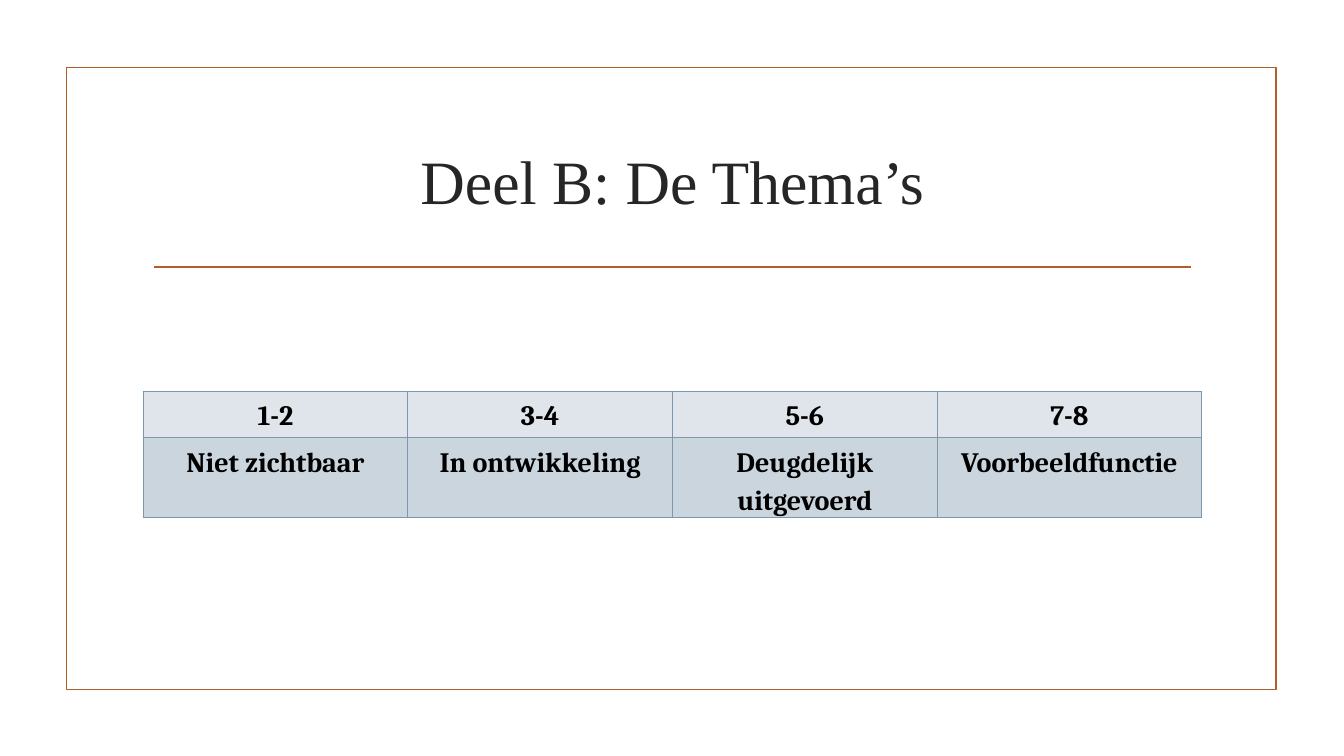
from lxml import etree
from pptx import Presentation
from pptx.dml.color import RGBColor
from pptx.enum.shapes import MSO_CONNECTOR, MSO_SHAPE
from pptx.enum.text import MSO_ANCHOR, PP_ALIGN
from pptx.oxml.ns import qn
from pptx.util import Inches, Pt

# Content
TITLE = "Deel B: De Thema’s"
SCALE = [
    ["1-2", "3-4", "5-6", "7-8"],
    ["Niet zichtbaar", "In ontwikkeling", "Deugdelijk uitgevoerd", "Voorbeeldfunctie"],
]

# Colours and constants
RUST = RGBColor(0xB1, 0x5E, 0x28)
DARK = RGBColor(0x26, 0x26, 0x26)
BLACK = RGBColor(0x00, 0x00, 0x00)
BORDER = RGBColor(0x7E, 0x97, 0xAD)
ROW_FILLS = [RGBColor(0xDF, 0xE5, 0xEA), RGBColor(0xCB, 0xD5, 0xDE)]
RECT, STRAIGHT = MSO_SHAPE.RECTANGLE, MSO_CONNECTOR.STRAIGHT
CENTER, TOP, MIDDLE = PP_ALIGN.CENTER, MSO_ANCHOR.TOP, MSO_ANCHOR.MIDDLE

# Layout, in inches
LEFT, WIDTH = 1.42, 10.5
ROW_HEIGHT = 0.46


def write(tf, text, size, font, color, bold=False, spacing=None):
    p = tf.paragraphs[0]
    p.alignment = CENTER
    if spacing:
        p.line_spacing = spacing
    r = p.add_run()
    r.text = text
    r.font.size, r.font.name, r.font.bold = Pt(size), font, bold
    r.font.color.rgb = color


def set_borders(cell, color, width):
    tcPr = cell._tc.get_or_add_tcPr()
    for i, side in enumerate(("lnL", "lnR", "lnT", "lnB")):
        ln = etree.Element(qn("a:" + side), w=str(Pt(width)))
        fill = etree.SubElement(ln, qn("a:solidFill"))
        etree.SubElement(fill, qn("a:srgbClr"), val=str(color))
        tcPr.insert(i, ln)


prs = Presentation()
prs.slide_width, prs.slide_height = Inches(13.33), Inches(7.5)
s = prs.slides.add_slide(prs.slide_layouts[5])

# Frame, placed behind the title
frame = s.shapes.add_shape(RECT, Inches(0.66), Inches(0.67), Inches(12), Inches(6.17))
frame.shadow.inherit = False
frame.fill.background()
frame.line.color.rgb, frame.line.width = RUST, Pt(1.25)
s.shapes.title._element.addprevious(frame._element)

# Rule under the title
rule = s.shapes.add_connector(STRAIGHT, Inches(1.53), Inches(2.65), Inches(11.81), Inches(2.65))
rule.line.color.rgb, rule.line.width = RUST, Pt(1.25)
etree.SubElement(rule._element.spPr, qn("a:effectLst"))

# Title
title = s.shapes.title
title.left, title.top = Inches(LEFT), Inches(1.07)
title.width, title.height = Inches(WIDTH), Inches(1.43)
title.text_frame.vertical_anchor = MIDDLE
write(title.text_frame, TITLE, 44, "Times New Roman", DARK)

# Rating scale table
rows, cols = len(SCALE), len(SCALE[0])
table = s.shapes.add_table(rows, cols, Inches(LEFT), Inches(3.88),
                           Inches(WIDTH), Inches(rows * ROW_HEIGHT)).table
for i, labels in enumerate(SCALE):
    for j, label in enumerate(labels):
        cell = table.cell(i, j)
        cell.fill.solid()
        cell.fill.fore_color.rgb = ROW_FILLS[i]
        cell.vertical_anchor = TOP
        cell.margin_left = cell.margin_right = Inches(0.07)
        cell.margin_top, cell.margin_bottom = Inches(0.03), 0
        set_borders(cell, BORDER, 1)
        write(cell.text_frame, label, 20, "Cambria", BLACK, bold=True, spacing=1.2)

prs.save("out.pptx")
